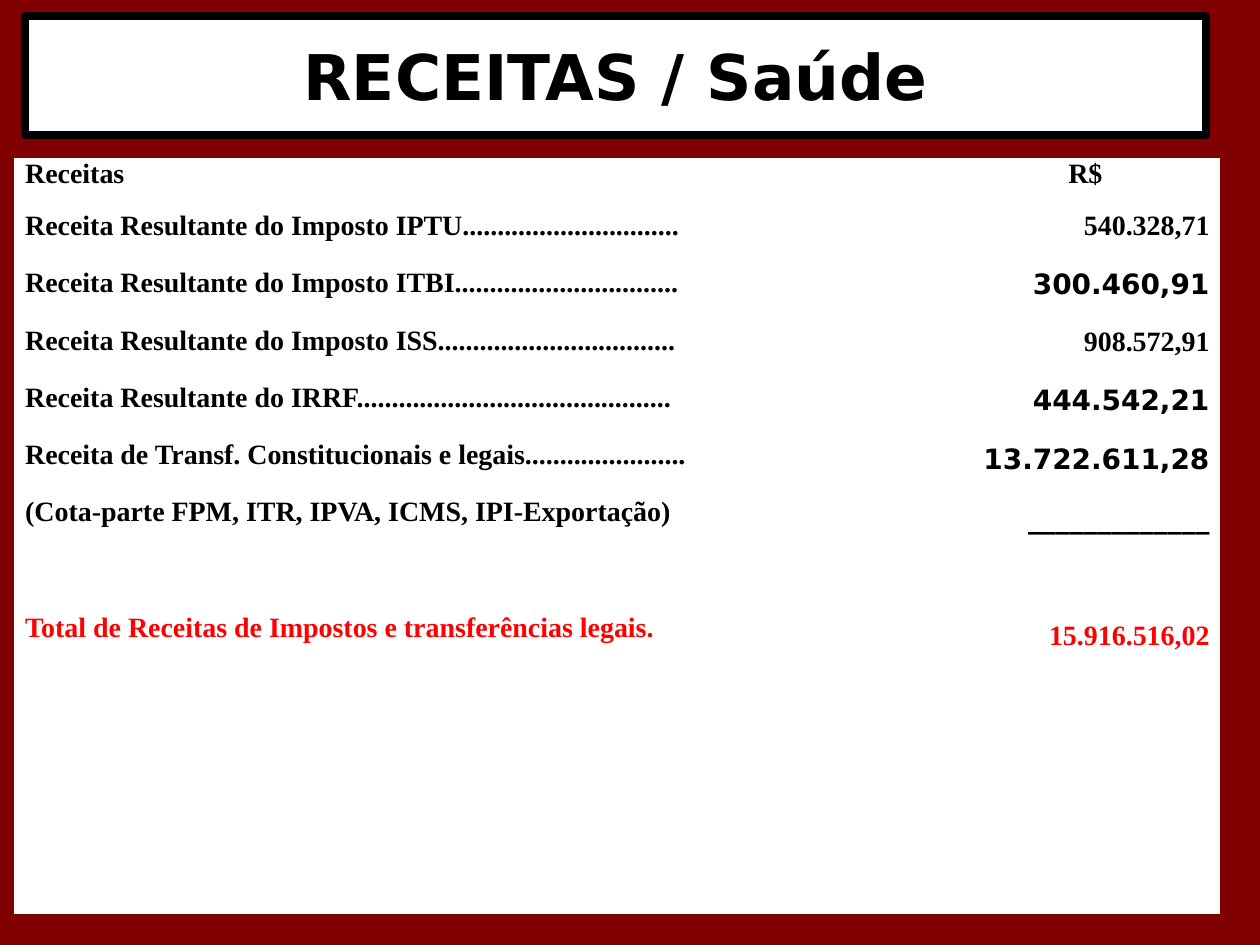
from lxml.etree import SubElement
from pptx import Presentation
from pptx.dml.color import RGBColor
from pptx.enum.shapes import MSO_SHAPE
from pptx.enum.text import MSO_ANCHOR, PP_ALIGN
from pptx.oxml.ns import qn
from pptx.util import Inches, Pt

SERIF, SANS = "Times New Roman", "DejaVu Sans"
BLACK, WHITE, RED, MAROON = "000000", "FFFFFF", "FF0000", "800000"

# label, amount, amount font
REVENUES = [
    ("Receita Resultante do Imposto IPTU" + "." * 31, "540.328,71", SERIF),
    ("Receita Resultante do Imposto ITBI" + "." * 32, "300.460,91", SANS),
    ("Receita Resultante do Imposto ISS" + "." * 34, "908.572,91", SERIF),
    ("Receita Resultante do IRRF" + "." * 45, "444.542,21", SANS),
    ("Receita de Transf. Constitucionais e legais" + "." * 23, "13.722.611,28", SANS),
    ("(Cota-parte FPM, ITR, IPVA, ICMS, IPI-Exportação)", "_" * 13, SANS),
]
TOTAL = ("Total de Receitas de Impostos e transferências legais.", "15.916.516,02")


def color(value):
    return RGBColor.from_string(value)


class SlideBuilder:
    def __init__(self, slide):
        self.slide = slide
        background = slide.background.fill
        background.solid()
        background.fore_color.rgb = color(MAROON)

    def set_text(self, paragraph, text, size=16, font=SERIF, ink=BLACK, align=PP_ALIGN.LEFT):
        paragraph.text = text
        paragraph.alignment = align
        paragraph.font.size = Pt(size)
        paragraph.font.name = font
        paragraph.font.bold = True
        paragraph.font.color.rgb = color(ink)

    def title(self, text, left, top, width, height):
        box = self.slide.shapes.add_shape(
            MSO_SHAPE.RECTANGLE, Inches(left), Inches(top), Inches(width), Inches(height))
        box.shadow.inherit = False
        box.fill.solid()
        box.fill.fore_color.rgb = color(WHITE)
        box.line.color.rgb = color(BLACK)
        box.line.width = Pt(4.5)
        box.text_frame.vertical_anchor = MSO_ANCHOR.MIDDLE
        paragraph = box.text_frame.paragraphs[0]
        self.set_text(paragraph, text, 36, SANS, align=PP_ALIGN.CENTER)
        paragraph.space_after = Pt(12)

    def table(self, left, top, widths, heights):
        table = self.slide.shapes.add_table(
            len(heights), len(widths), Inches(left), Inches(top),
            Inches(sum(widths)), Inches(sum(heights))).table
        for column, width in zip(table.columns, widths):
            column.width = Inches(width)
        for row, height in zip(table.rows, heights):
            row.height = Inches(height)
        for cell in table.iter_cells():
            cell.margin_left = cell.margin_right = Inches(0.08)
            cell.margin_top = cell.margin_bottom = 0
            self.borders(cell)
            cell.fill.solid()
            cell.fill.fore_color.rgb = color(WHITE)
        return table

    def borders(self, cell):
        properties = cell._tc.get_or_add_tcPr()
        for side in ("a:lnL", "a:lnR", "a:lnT", "a:lnB"):
            line = SubElement(properties, qn(side), w=str(Pt(1)))
            fill = SubElement(line, qn("a:solidFill"))
            SubElement(fill, qn("a:srgbClr"), val=WHITE)

    def lines(self, cell, entries, align, total_gap):
        """Fill a cell with (text, font, ink) lines; the last, the total, is set apart."""
        frame = cell.text_frame
        for index, (text, font, ink) in enumerate(entries):
            paragraph = frame.add_paragraph() if index else frame.paragraphs[0]
            self.set_text(paragraph, text, font=font, ink=ink, align=align)
            paragraph.line_spacing = 1.5
            paragraph.space_after = Pt(6)
        paragraph.space_before = Pt(total_gap)


def main():
    deck = Presentation()
    deck.slide_width, deck.slide_height = Inches(10), Inches(7.5)
    page = SlideBuilder(deck.slides.add_slide(deck.slide_layouts[6]))
    page.title("RECEITAS / Saúde", 0.2, 0.13, 9.37, 0.94)

    table = page.table(0.12, 1.26, widths=[7.32, 2.24], heights=[0.29, 5.7])
    headings = (("Receitas", PP_ALIGN.JUSTIFY), ("R$", PP_ALIGN.CENTER))
    for column, (heading, align) in enumerate(headings):
        paragraph = table.cell(0, column).text_frame.paragraphs[0]
        page.set_text(paragraph, heading, align=align)
        paragraph.space_after = Pt(6)
    table.cell(0, 1).margin_left = Inches(0.19)

    labels = [(label, SERIF, BLACK) for label, _, _ in REVENUES]
    amounts = [(amount, font, BLACK) for _, amount, font in REVENUES]
    page.lines(table.cell(1, 0), labels + [(TOTAL[0], SERIF, RED)], PP_ALIGN.JUSTIFY, 33.6)
    page.lines(table.cell(1, 1), amounts + [(TOTAL[1], SERIF, RED)], PP_ALIGN.RIGHT, 34)
    deck.save("out.pptx")


if __name__ == "__main__":
    main()
